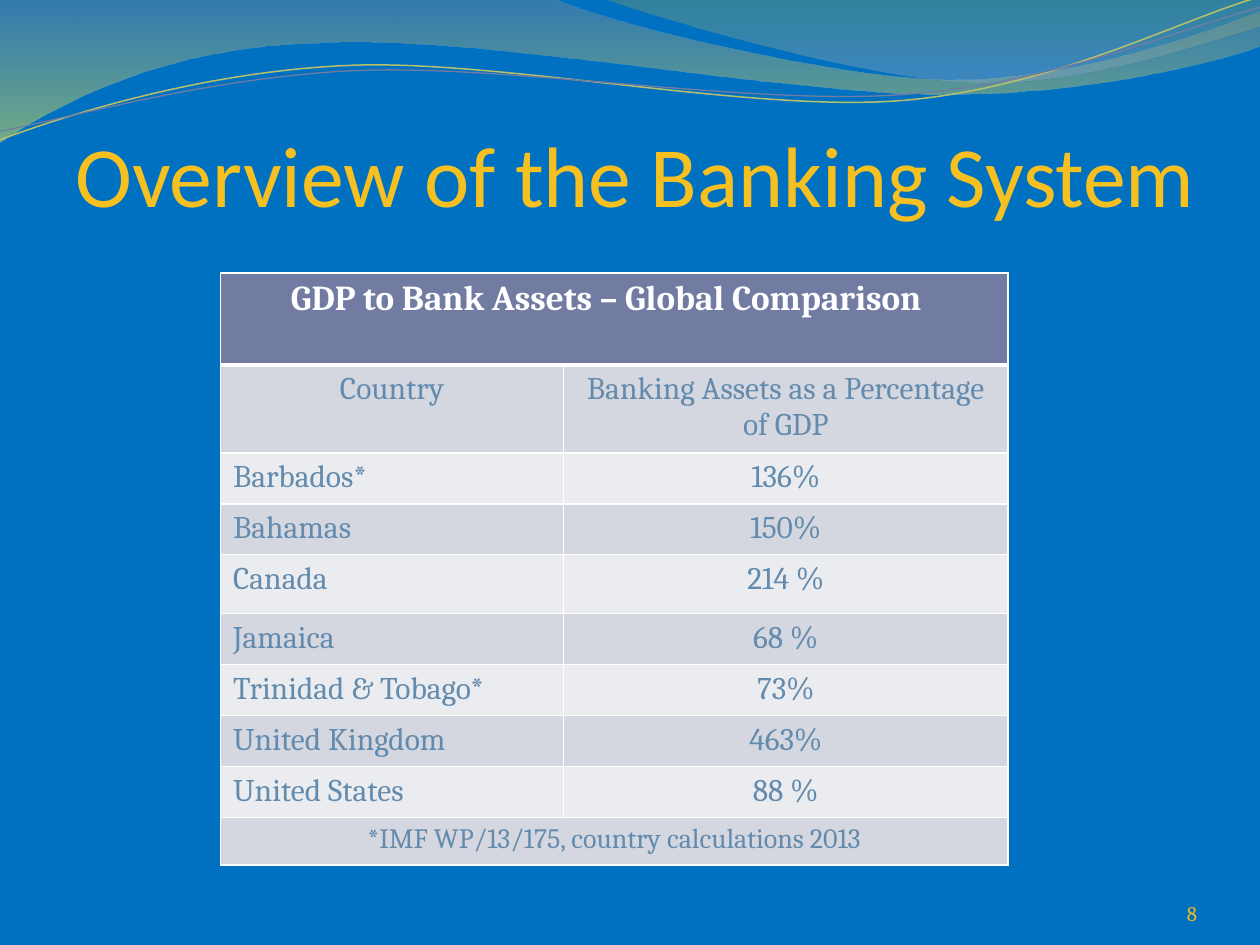
from pptx import Presentation
from pptx.dml.color import RGBColor
from pptx.enum.text import MSO_ANCHOR, PP_ALIGN
from pptx.oxml.ns import qn
from pptx.util import Pt
from lxml.etree import SubElement


def tint(code):
    return RGBColor.from_string(code)


def write(frame, text, size, font, code, align=PP_ALIGN.LEFT, bold=False):
    para = frame.paragraphs[0]
    para.alignment = align
    run = para.add_run()
    run.text = text
    run.font.size = Pt(size)
    run.font.name = font
    run.font.bold = bold
    run.font.color.rgb = tint(code)


deck = Presentation()
deck.slide_width, deck.slide_height = Pt(720), Pt(540)
slide = deck.slides.add_slide(deck.slide_layouts[6])
slide.background.fill.solid()
slide.background.fill.fore_color.rgb = tint("0070C0")

# Waves: start point, then lines (2 numbers) or cubic curves (6 numbers).
# Bands have gradient stops (place, colour, opacity); strands a colour and width.
waves = [
    ([(0, 0), (316.8, -0.7), (342.7, 12.2, 478.1, 45.4, 545.8, 45.4),
      (614.2, 45.4, 689.8, 18.7, 720, 6.5), (720.7, 25.9),
      (707.8, 31.7, 626.4, 54.7, 537.1, 54), (447.8, 54, 275, 20.2, 185, 24.5),
      (92.9, 25.9, 33.1, 59.8, -0.7, 81.4), (0, 0)],
     [(0, "72889B", 45), (1, "D3DE57", 55)], None),
    ([(344.9, -0.7), (366.5, 7.9, 491, 44.6, 553.7, 46.8),
      (616.3, 49.7, 691.9, 23, 720, 15.1), (720, 0), (344.9, -0.7)],
     [(0, "A4AC50", 30), (0.8, "84A3BD", 45)], None),
    ([(0, 79.9), (34.6, 67, 113.8, 41, 199.4, 37.4),
      (284.4, 33.8, 427, 64.1, 513.4, 57.6), (599.8, 51.1, 675.4, 10.8, 718.6, -1.4)],
     None, ("B9C06C", 0.85)),
    ([(0, 74.9), (33.8, 69.1, 118.1, 44, 203.8, 40.3),
      (290.2, 36.7, 429.8, 60.5, 516.2, 54), (601.9, 48.2, 677.5, 15.1, 720, 4.3)],
     None, ("727CA3", 0.75)),
]
for route, stops, line in waves:
    dots = [(Pt(part[i]), Pt(part[i + 1])) for part in route for i in range(0, len(part), 2)]
    pen = slide.shapes.build_freeform(*dots[0])
    pen.add_line_segments(dots[1:], close=bool(stops))
    wave = pen.convert_to_shape()
    wave.shadow.inherit = False
    # Join each three points of a curve into one cubic segment
    legs = iter(list(wave._element.iter(qn("a:lnTo"))))
    for part in route[1:]:
        leg = next(legs)
        if len(part) == 6:
            leg.tag = qn("a:cubicBezTo")
            for _ in range(2):
                more = next(legs)
                leg.append(more[0])
                more.getparent().remove(more)
    if stops:
        wave.line.fill.background()
        wave.fill.gradient()
        wave.fill.gradient_angle = 270
        for stop, (place, code, _) in zip(wave.fill.gradient_stops, stops):
            stop.position = place
            stop.color.rgb = tint(code)
        for clr, (_, _, alpha) in zip(wave._element.iter(qn("a:srgbClr")), stops):
            SubElement(clr, qn("a:alpha"), val=str(alpha * 1000))
    else:
        wave.fill.background()
        wave.line.color.rgb = tint(line[0])
        wave.line.width = Pt(line[1])

# Slide number
box = slide.shapes.add_textbox(Pt(624), Pt(500.4), Pt(60), Pt(28.8))
frame = box.text_frame
frame.word_wrap = True
frame.vertical_anchor = MSO_ANCHOR.BOTTOM
frame.margin_left = frame.margin_right = frame.margin_top = frame.margin_bottom = 0
write(frame, "8", 12, "Cambria", "EBB81F", PP_ALIGN.RIGHT)

# Title
box = slide.shapes.add_textbox(Pt(36), Pt(66.2), Pt(661), Pt(67))
box.text_frame.word_wrap = False
write(box.text_frame, "Overview of the Banking System", 49, "Calibri", "F6C120")

# Table
rows = [
    ("GDP to Bank Assets – Global Comparison  ", ""),
    ("Country", "Banking Assets as a Percentage of GDP"),
    ("Barbados*", "136%"),
    ("Bahamas", "150%"),
    ("Canada", "214 %"),
    ("Jamaica", "68 %"),
    ("Trinidad & Tobago*", "73%"),
    ("United Kingdom", "463%"),
    ("United States", "88 %"),
    ("*IMF WP/13/175, country calculations 2013", ""),
]
last = len(rows) - 1
highs = [52.5, 50.2, 29, 29, 33.8, 29.1, 29.1, 29.1, 29.1, 27.2]
grid = slide.shapes.add_table(len(rows), 2, Pt(126), Pt(156), Pt(450), Pt(338.3)).table
grid.columns[0].width, grid.columns[1].width = Pt(196), Pt(254)
for r, (row, high) in enumerate(zip(rows, highs)):
    grid.rows[r].height = Pt(high)
    if r in (0, last):
        grid.cell(r, 0).merge(grid.cell(r, 1))
    for c, text in enumerate(row):
        cell = grid.cell(r, c)
        # White borders, thick under the heading
        props = cell._tc.get_or_add_tcPr()
        for side in "LRTB":
            thick = (r, side) in ((0, "B"), (1, "T"))
            edge = SubElement(props, qn("a:ln" + side), w=str(Pt(3 if thick else 1)))
            fill = SubElement(edge, qn("a:solidFill"))
            SubElement(fill, qn("a:srgbClr"), val="FFFFFF")
        cell.fill.solid()
        cell.fill.fore_color.rgb = tint("727CA3" if r == 0 else "D5D7E0" if r % 2 else "EBECF0")
        if text:
            left = c == 0 and 1 < r < last
            write(cell.text_frame, text, {0: 20, last: 16}.get(r, 18), "Cambria",
                  "638BAD" if r else "FFFFFF",
                  PP_ALIGN.LEFT if left else PP_ALIGN.CENTER, r == 0)

deck.save("out.pptx")
